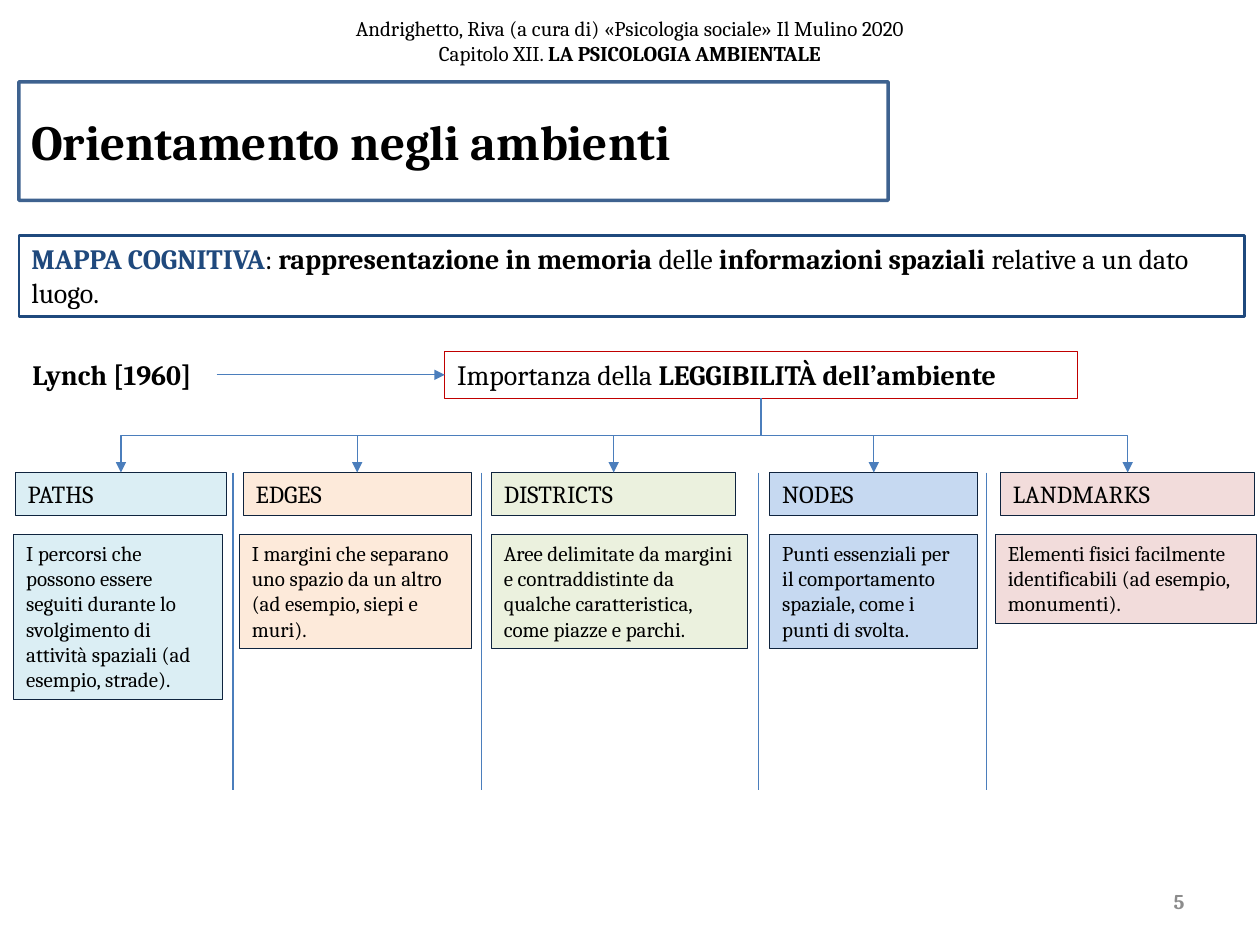
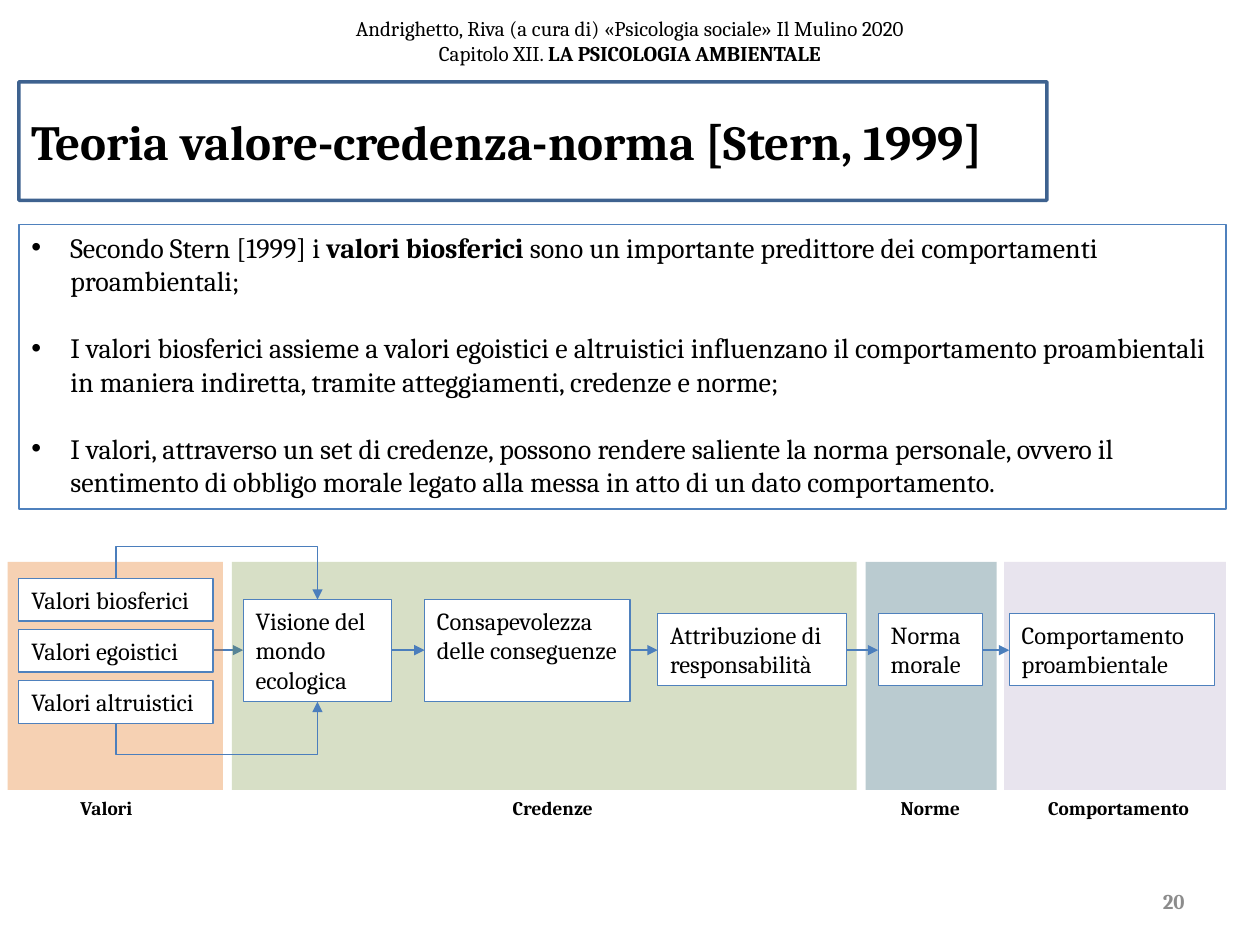
from lxml import etree
from pptx import Presentation
from pptx.dml.color import RGBColor
from pptx.enum import shapes, text
from pptx.oxml.ns import qn
from pptx.util import Inches, Pt

FONT = "Cambria"
COLORS = {
    "black": "000000", "white": "FFFFFF", "grey": "8C8C8C", "navy": "1F497D",
    "dark": "0F243E", "blue": "4F81BD", "arrow": "4B7EBC", "red": "C00000",
    "aqua": "DBEEF4", "peach": "FDEADA", "lime": "EBF1DE", "sky": "C6D9F1",
    "rose": "F2DCDB", "orange": "E46C0A", "green": "77933C", "teal": "215968",
    "violet": "B3A2C7",
}


def rgb(name):
    """Return the named palette colour."""
    return RGBColor.from_string(COLORS[name])


def set_alpha(properties, percent):
    """Make every plain colour under the given properties translucent."""
    for color in properties.iter(qn("a:srgbClr")):
        etree.SubElement(color, qn("a:alpha")).set("val", str(percent * 1000))


def write(shape, paragraphs, size, color="black", align=text.PP_ALIGN.LEFT,
          anchor=text.MSO_ANCHOR.TOP, wrap=True):
    """Fill a shape with paragraphs in which ** switches bold on and off."""
    frame = shape.text_frame
    frame.word_wrap = wrap
    frame.vertical_anchor = anchor
    for index, content in enumerate(paragraphs):
        paragraph = frame.paragraphs[0] if index == 0 else frame.add_paragraph()
        paragraph.alignment = align
        for part, words in enumerate(content.split("**")):
            if words:
                run = paragraph.add_run()
                run.text = words
                run.font.name = FONT
                run.font.size = Pt(size)
                run.font.bold = part % 2 == 1
                run.font.color.rgb = rgb(color)


def add_label(slide, box, paragraphs, size, **style):
    """Add a plain text box."""
    label = slide.shapes.add_textbox(*map(Inches, box))
    write(label, paragraphs, size, **style)
    return label


def add_box(slide, box, fill=None, line=None, width=0.75):
    """Add a rectangle with an optional fill and outline."""
    shape = slide.shapes.add_shape(shapes.MSO_SHAPE.RECTANGLE, *map(Inches, box))
    shape.shadow.inherit = False
    if fill:
        shape.fill.solid()
        shape.fill.fore_color.rgb = rgb(fill)
    else:
        shape.fill.background()
    if line:
        shape.line.color.rgb = rgb(line)
        shape.line.width = Pt(width)
    else:
        shape.line.fill.background()
    return shape


def add_text_box(slide, box, content, size, fill="white", line="blue", width=0.75):
    """Add an outlined rectangle holding one paragraph."""
    shape = add_box(slide, box, fill, line, width)
    write(shape, [content], size)
    return shape


def add_line(slide, start, end, arrow=True, kind=shapes.MSO_CONNECTOR.STRAIGHT):
    """Add a thin connector, with an arrowhead at its end if wanted."""
    connector = slide.shapes.add_connector(kind, *map(Inches, (*start, *end)))
    connector.line.color.rgb = rgb("arrow")
    connector.line.width = Pt(0.75)
    properties = connector.element.spPr
    if arrow:
        etree.SubElement(properties.find(qn("a:ln")), qn("a:tailEnd")).set("type", "triangle")
    etree.SubElement(properties, qn("a:effectLst"))
    return connector


def add_elbow(slide, start, end, bend_y):
    """Add an arrow that leaves vertically, runs across at bend_y and ends vertically."""
    (x1, y1), (x2, y2) = start, end
    middle_x, middle_y = (x1 + x2) / 2, (y1 + y2) / 2
    half_x, half_y = (x2 - x1) / 2, (y2 - y1) / 2
    connector = add_line(slide, (middle_x - half_y, middle_y + half_x),
                         (middle_x + half_y, middle_y - half_x),
                         kind=shapes.MSO_CONNECTOR.ELBOW)
    properties = connector.element.spPr
    properties.find(qn("a:xfrm")).set("rot", "5400000")
    geometry = properties.find(qn("a:prstGeom"))
    adjustments = geometry.find(qn("a:avLst"))
    if adjustments is None:
        adjustments = etree.SubElement(geometry, qn("a:avLst"))
    guide = etree.SubElement(adjustments, qn("a:gd"))
    guide.set("name", "adj1")
    guide.set("fmla", f"val {round((bend_y - y1) / (y2 - y1) * 100000)}")


def start_slide(presentation, title, title_width, number):
    """Add a blank slide with the running head, title frame and slide number."""
    slide = presentation.slides.add_slide(presentation.slide_layouts[6])
    middle = text.MSO_ANCHOR.MIDDLE
    add_label(slide, (0, -0.11, 10, 0.87),
              ["Andrighetto, Riva (a cura di) «Psicologia sociale» Il Mulino 2020",
               "Capitolo XII. **LA PSICOLOGIA AMBIENTALE**"],
              12, align=text.PP_ALIGN.CENTER, anchor=middle)
    add_label(slide, (7.17, 6.95, 2.33, 0.4), [f"**{number}**"], 12, color="grey",
              align=text.PP_ALIGN.RIGHT, anchor=middle)
    frame = add_box(slide, (0.15, 0.65, title_width, 0.94), line="navy", width=2)
    set_alpha(frame.line._ln, 86)
    write(frame, [f"**{title}**"], 28, anchor=middle)
    return slide


def draw_legibility(slide, left, top):
    """Link the author to the idea of legibility and return where the idea box ends."""
    height, idea_left, idea_width = 0.37, left + 3.37, 5.02
    add_label(slide, (left, top, 1.56, height), ["**Lynch [1960]**"], 16, wrap=False)
    add_text_box(slide, (idea_left, top, idea_width, height),
                 "Importanza della **LEGGIBILITÀ dell’ambiente**", 16,
                 line="red", width=0.5)
    add_line(slide, (left + 1.56, top + height / 2), (idea_left, top + height / 2))
    return idea_left + idea_width / 2, top + height


def draw_elements(slide, top, source):
    """Draw the five elements of the city as columns fed from one source point."""
    columns = [
        ("PATHS", "aqua", (0.12, 1.68), (0.11, 1.66, 1.31),
         "I percorsi che possono essere seguiti durante lo svolgimento di attività "
         "spaziali (ad esempio, strade)."),
        ("EDGES", "peach", (1.93, 1.81), (1.9, 1.84, 0.91),
         "I margini che separano uno spazio da un altro (ad esempio, siepi e muri)."),
        ("DISTRICTS", "lime", (3.9, 1.94), (3.9, 2.03, 0.91),
         "Aree delimitate da margini e contraddistinte da qualche caratteristica, "
         "come piazze e parchi."),
        ("NODES", "sky", (6.11, 1.65), (6.11, 1.65, 0.91),
         "Punti essenziali per il comportamento spaziale, come i punti di svolta."),
        ("LANDMARKS", "rose", (7.94, 2.02), (7.9, 2.07, 0.71),
         "Elementi fisici facilmente identificabili (ad esempio, monumenti)."),
    ]
    for name, fill, (left, width), (body_left, body_width, body_height), meaning in columns:
        add_text_box(slide, (left, top, width, 0.34), name, 14, fill, "dark", 0.5)
        add_text_box(slide, (body_left, top + 0.49, body_width, body_height),
                     meaning, 12, fill, "dark", 0.5)
        add_elbow(slide, source, (left + width / 2, top), (source[1] + top) / 2)
    for x in (1.85, 3.82, 6.02, 7.83):
        add_line(slide, (x, top), (x, top + 2.52), arrow=False)


def build_orientation(presentation):
    """Build the slide on finding one's way in environments."""
    slide = start_slide(presentation, "Orientamento negli ambienti", 6.9, 5)
    definition = add_text_box(
        slide, (0.15, 1.87, 9.73, 0.64),
        "**MAPPA COGNITIVA**: **rappresentazione in memoria **delle "
        "**informazioni spaziali **relative a un dato luogo.",
        16, line="navy", width=1.5)
    definition.text_frame.paragraphs[0].runs[0].font.color.rgb = rgb("navy")
    draw_elements(slide, 3.75, draw_legibility(slide, 0.16, 2.79))


def draw_points(slide, box):
    """Draw the framed list of bulleted statements."""
    frame = add_box(slide, box, line="blue")
    write(frame, [
        "Secondo Stern [1999] i **valori biosferici **sono un importante predittore "
        "dei comportamenti proambientali;",
        "I valori biosferici assieme a valori egoistici e altruistici influenzano il "
        "comportamento proambientali in maniera indiretta, tramite atteggiamenti, "
        "credenze e norme;",
        "I valori, attraverso un set di credenze, possono rendere saliente la norma "
        "personale, ovvero il sentimento di obbligo morale legato alla messa in atto "
        "di un dato comportamento.",
    ], 16)
    for index, paragraph in enumerate(frame.text_frame.paragraphs):
        if index:
            paragraph.space_before = Pt(19)
        properties = paragraph._p.get_or_add_pPr()
        properties.set("marL", str(Inches(0.31)))
        properties.set("indent", str(-Inches(0.31)))
        etree.SubElement(properties, qn("a:buFont")).set("typeface", "Arial")
        etree.SubElement(properties, qn("a:buChar")).set("char", "•")


def draw_chain(slide, left, top):
    """Draw the chain from values to behaviour on its four tinted bands."""
    band_height, axis = 1.81, top + 0.7
    value_left, value_width, value_height = left + 0.09, 1.54, 0.34
    value_tops = [top + 0.13 + 0.405 * row for row in range(3)]
    steps = [
        ("Visione del mondo ecologica", 1.87, 1.18, 0.3, 0.81),
        ("Consapevolezza delle conseguenze", 3.31, 1.63, 0.3, 0.81),
        ("Attribuzione di responsabilità", 5.16, 1.5, 0.41, 0.57),
        ("Norma morale", 6.91, 0.83, 0.41, 0.57),
        ("Comportamento proambientale", 7.95, 1.63, 0.41, 0.57),
    ]
    add_line(slide, (value_left + value_width, axis), (left + steps[0][1], axis))

    bands = [
        ("Valori", "orange", 31, 0, 1.71, 0.48, 0.68),
        ("Credenze", "green", 29, 1.78, 4.96, 3.91, 1.04),
        ("Norme", "teal", 31, 6.81, 1.04, 6.99, 0.75),
        ("Comportamento", "violet", 29, 7.91, 1.76, 8.16, 1.42),
    ]
    for name, fill, opacity, offset, width, label_offset, label_width in bands:
        band = add_box(slide, (left + offset, top, width, band_height), fill)
        set_alpha(band.element.spPr, opacity)
        add_label(slide, (left + label_offset, top + band_height, label_width, 0.29),
                  [f"**{name}**"], 11)

    for kind, value_top in zip(("biosferici", "egoistici", "altruistici"), value_tops):
        add_text_box(slide, (value_left, value_top, value_width, value_height),
                     f"Valori {kind}", 14)
    for name, offset, width, drop, height in steps:
        add_text_box(slide, (left + offset, top + drop, width, height), name, 14)
    for (_, offset, width, *_), following in zip(steps, steps[1:]):
        add_line(slide, (left + offset + width, axis), (left + following[1], axis))

    _, offset, width, drop, height = steps[0]
    value_x, vision_x = value_left + value_width / 2, left + offset + width / 2
    lowest = value_tops[-1] + value_height
    add_elbow(slide, (value_x, value_tops[0]), (vision_x, top + drop), value_tops[0] - 0.25)
    add_elbow(slide, (value_x, lowest), (vision_x, top + drop + height), lowest + 0.25)


def build_theory(presentation):
    """Build the slide on the value-belief-norm theory."""
    slide = start_slide(presentation, "Teoria valore-credenza-norma [Stern, 1999]", 8.16, 20)
    draw_points(slide, (0.15, 1.78, 9.58, 2.26))
    draw_chain(slide, 0.06, 4.46)


def main():
    """Build and save the presentation."""
    presentation = Presentation()
    presentation.slide_width = Inches(10)
    presentation.slide_height = Inches(7.5)
    build_orientation(presentation)
    build_theory(presentation)
    presentation.save("out.pptx")


if __name__ == "__main__":
    main()
